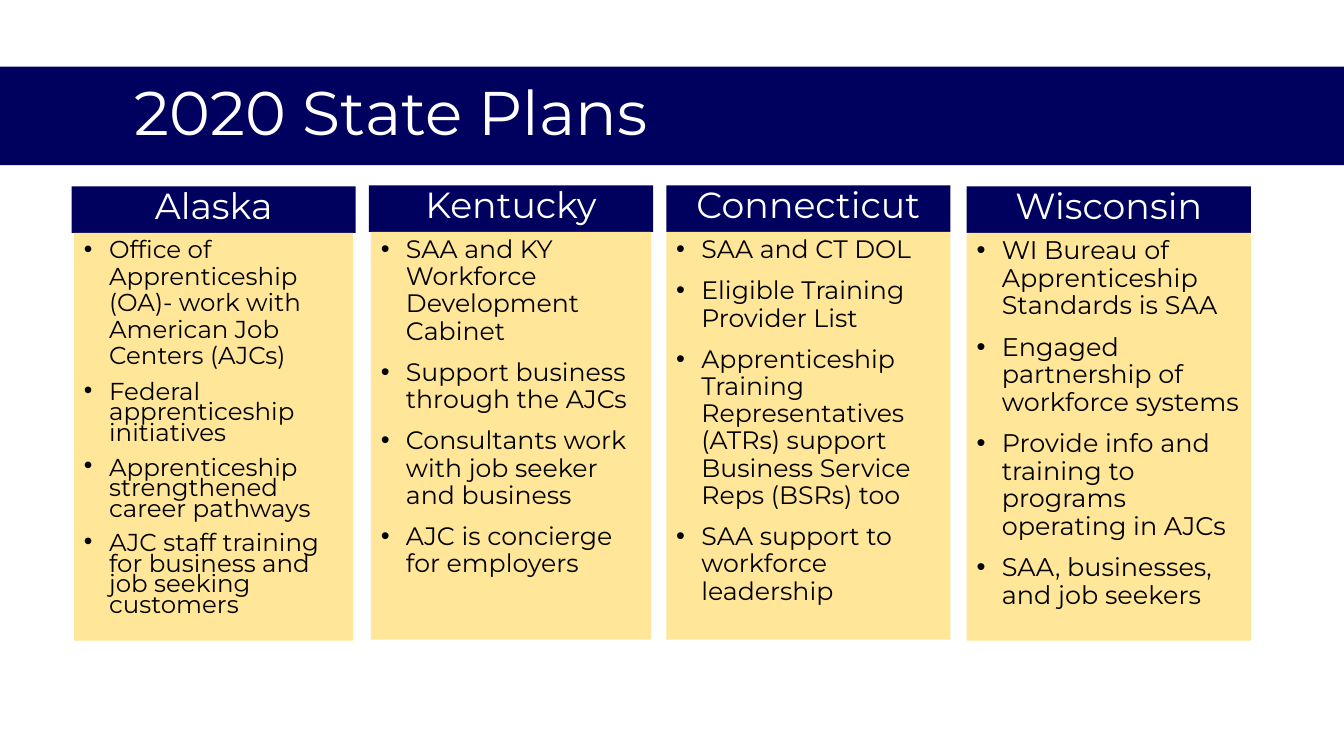
from dataclasses import dataclass
from lxml.etree import SubElement
from pptx import Presentation
from pptx.dml.color import RGBColor
from pptx.enum.shapes import MSO_SHAPE
from pptx.enum.text import MSO_ANCHOR, PP_ALIGN
from pptx.oxml.ns import qn
from pptx.util import Pt


@dataclass(frozen=True)
class Theme:
    font: str = "Montserrat"
    navy: RGBColor = RGBColor(0x00, 0x01, 0x5E)
    sand: RGBColor = RGBColor(0xFF, 0xE6, 0x99)
    white: RGBColor = RGBColor(0xFF, 0xFF, 0xFF)
    black: RGBColor = RGBColor(0, 0, 0)
    title: float = 44
    head: float = 25.9
    gap: float = 10


THEME = Theme()
WIDE, HIGH = 960, 540
HEAD = 33.1  # height of a state's header

# State, left, top, body inset, text size, line spacing after the first bullet, bullets
STATES = [
    ("Alaska", 51.1, 133.2, 1.8, 17.5, 0.7, [
        "Office of Apprenticeship (OA)- work with American Job Centers (AJCs)",
        "Federal apprenticeship initiatives",
        "Apprenticeship strengthened career pathways",
        "AJC staff training for business and job seeking customers"]),
    ("Kentucky", 263.5, 132.5, 1.4, 18, 0.9, [
        "SAA and KY Workforce Development Cabinet",
        "Support business through the AJCs",
        "Consultants work with job seeker and business",
        "AJC is concierge for employers"]),
    ("Connecticut", 475.9, 132.5, 0, 18, 0.9, [
        "SAA and CT DOL",
        "Eligible Training Provider List",
        "Apprenticeship Training Representatives (ATRs) support "
        "Business Service Reps (BSRs) too",
        "SAA support to workforce leadership"]),
    ("Wisconsin", 690.5, 133.2, 0, 18.2, 0.9, [
        "WI Bureau of Apprenticeship Standards is SAA",
        "Engaged partnership of workforce systems",
        "Provide info and training to programs operating in AJCs",
        "SAA, businesses, and job seekers"]),
]


def add_box(slide, x, y, w, h, fill):
    box = slide.shapes.add_shape(MSO_SHAPE.RECTANGLE, Pt(x), Pt(y), Pt(w), Pt(h))
    box.shadow.inherit = False
    box.fill.solid()
    box.fill.fore_color.rgb = fill
    box.line.fill.background()
    frame = box.text_frame
    frame.word_wrap = True
    frame.vertical_anchor = MSO_ANCHOR.TOP
    return frame


def style(para, size, color, align, space):
    para.alignment = align
    para.line_spacing = space
    para.font.name = THEME.font
    para.font.size = Pt(size)
    para.font.color.rgb = color


def add_bullet(para):
    props = para._p.get_or_add_pPr()
    props.set("marL", str(Pt(18)))
    props.set("indent", str(Pt(-18)))
    SubElement(props, qn("a:buFont"), typeface="Arial")
    SubElement(props, qn("a:buChar"), char="•")


# Full-width band with the slide title
def add_title(slide, text, x, y, w, h):
    add_box(slide, x, y, w, h, THEME.navy)
    label = slide.shapes.add_textbox(Pt(x + 89.3), Pt(y + 10), Pt(w - 173), Pt(50.4))
    frame = label.text_frame
    frame.word_wrap = True
    frame.vertical_anchor = MSO_ANCHOR.MIDDLE
    frame.text = text
    style(frame.paragraphs[0], THEME.title, THEME.white, PP_ALIGN.LEFT, 0.9)


# One state: header above a bulleted panel
def add_state(slide, name, x, y, w, h, inset, size, space, items):
    head = add_box(slide, x, y, w, HEAD, THEME.navy)
    head.text = name
    style(head.paragraphs[0], THEME.head, THEME.white, PP_ALIGN.CENTER, 0.8)

    body = add_box(slide, x + inset, y + HEAD, w - 2 * inset, h - HEAD, THEME.sand)
    body.text = "\n".join(items)
    for i, para in enumerate(body.paragraphs):
        add_bullet(para)
        style(para, size, THEME.black, PP_ALIGN.LEFT, space if i else 0.9)
        if i:
            para.space_before = Pt(THEME.gap)


def main():
    deck = Presentation()
    deck.slide_width, deck.slide_height = Pt(WIDE), Pt(HIGH)
    slide = deck.slides.add_slide(deck.slide_layouts[6])
    add_title(slide, "2020 State Plans", 0, 47.5, WIDE, 70.5)
    for name, x, y, inset, size, space, items in STATES:
        add_state(slide, name, x, y, 203, 324.4, inset, size, space, items)
    deck.save("out.pptx")


if __name__ == "__main__":
    main()
